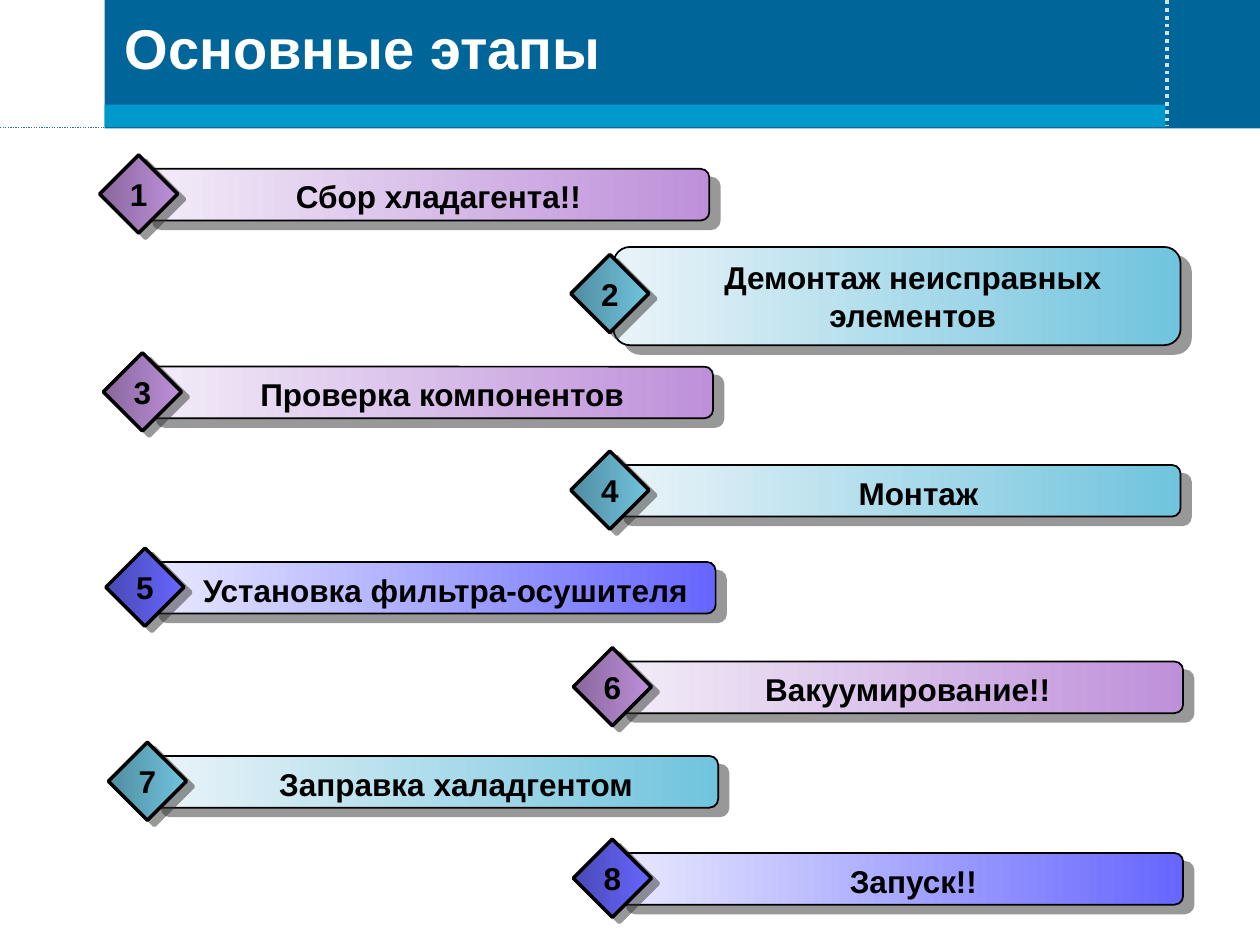
from lxml import etree
from pptx import Presentation
from pptx.dml.color import RGBColor
from pptx.enum import dml, shapes, text
from pptx.oxml import parse_xml
from pptx.oxml.ns import nsdecls, qn
from pptx.util import Inches, Pt


def rgb(code):
    return RGBColor.from_string(code)


def shade(props, color, alpha, dist, angle):
    """Give shape or run properties a hard offset shadow."""
    for old in props.findall(qn("a:effectLst")):
        props.remove(old)
    effect = parse_xml(
        f'<a:effectLst {nsdecls("a")}><a:outerShdw blurRad="0" dist="{Pt(dist)}" '
        f'dir="{angle * 60000}" algn="ctr" rotWithShape="0"><a:srgbClr val="{color}">'
        f'<a:alpha val="{alpha * 1000}"/></a:srgbClr></a:outerShdw></a:effectLst>')
    fill = props.find(qn("a:solidFill"))
    if props.tag == qn("a:rPr") and fill is not None:
        fill.addnext(effect)
    else:
        props.append(effect)


prs = Presentation()
prs.slide_width, prs.slide_height = Inches(10), Inches(7.5)
slide = prs.slides.add_slide(prs.slide_layouts[5])
parts = slide.shapes

# Header: dotted rules and two bands
rules = [(0, 1.01, 10, 1.01, "2F6E9D", 0.75), (9.26, 0, 9.26, 1, "CDE1E7", 2.25)]
bands = [(9.17, 0, 1.02, "006699"), (8.42, 0.83, 0.18, "0099CC")]
lines = []
for x1, y1, x2, y2, color, width in rules:
    rule = parts.add_connector(shapes.MSO_CONNECTOR.STRAIGHT,
                               Inches(x1), Inches(y1), Inches(x2), Inches(y2))
    rule.line.color.rgb = rgb(color)
    rule.line.width = Pt(width)
    rule.line.dash_style = dml.MSO_LINE.ROUND_DOT
    etree.SubElement(rule._element.spPr, qn("a:effectLst"))
    lines.append(rule)
for w, y, h, color in bands:
    band = parts.add_shape(shapes.MSO_SHAPE.RECTANGLE,
                           Inches(0.83), Inches(y), Inches(w), Inches(h))
    band.shadow.inherit = False
    band.fill.solid()
    band.fill.fore_color.rgb = rgb(color)
    band.line.fill.background()
parts._spTree.append(lines[1]._element)  # the upright rule lies over the bands

# Title, brought in front of the bands
title = parts.title
parts._spTree.append(title._element)
title.left, title.top = Inches(0.75), Inches(0.07)
title.width, title.height = Inches(7.88), Inches(0.61)
frame = title.text_frame
frame.margin_left = Inches(0.24)
frame.margin_right = frame.margin_top = frame.margin_bottom = Inches(0.04)
frame.vertical_anchor = text.MSO_ANCHOR.TOP
frame.auto_size = text.MSO_AUTO_SIZE.NONE
para = frame.paragraphs[0]
para.alignment = text.PP_ALIGN.LEFT
run = para.add_run()
run.text = "Основные этапы"
run.font.size, run.font.bold, run.font.name = Pt(32), True, "Arial"
run.font.color.rgb = rgb("FFFFFF")
shade(run._r.get_or_add_rPr(), "000000", 100, 2.8, 45)

# Steps: pale and full tone of the bar, dark tone of the diamond
tones = {
    "plum": ("F3EDF8", "BE90DA", "88679C"),
    "aqua": ("EAF4F8", "70C4DE", "508C9F"),
    "blue": ("E9E9FF", "6666FF", "4949B6"),
}
# tone, bar left, bar top, bar height, label left, label width, label
steps = [
    ("plum", 1.13, 1.34, 0.41, 1.7, 3.56, "Сбор хладагента!!"),
    ("aqua", 4.87, 1.96, 0.78, 5.16, 4.17, "Демонтаж неисправных элементов"),
    ("plum", 1.16, 2.91, 0.41, 1.73, 3.56, "Проверка компонентов"),
    ("aqua", 4.87, 3.69, 0.41, 5.51, 3.56, "Монтаж"),
    ("blue", 1.18, 4.46, 0.41, 1.39, 4.29, "Установка фильтра-осушителя"),
    ("plum", 4.89, 5.25, 0.41, 5.46, 3.56, "Вакуумирование!! "),
    ("aqua", 1.2, 6, 0.41, 1.84, 3.56, "Заправка халадгентом"),
    ("blue", 4.89, 6.77, 0.41, 5.47, 3.56, "Запуск!!"),
]
for num, (tone, x, y, h, left, wide, label) in enumerate(steps, 1):
    pale, full, dark = tones[tone]
    tall = h > 0.5
    top = y + 0.06 if tall else y - 0.11
    for kind, box, start, width, dist, angle in [
        (shapes.MSO_SHAPE.ROUNDED_RECTANGLE, (x, y, 4.5, h), pale, 1, 7.8, 40),
        (shapes.MSO_SHAPE.DIAMOND, (x - 0.34, top, 0.62, 0.62), dark, 2, 5, 37),
    ]:
        shape = parts.add_shape(kind, *map(Inches, box))
        shape.shadow.inherit = False
        shape.fill.gradient()
        shape.fill.gradient_angle = 0
        for stop, color in zip(shape.fill.gradient_stops, (start, full)):
            stop.color.rgb = rgb(color)
        shape.line.color.rgb = rgb("000000")
        shape.line.width = Pt(width)
        shade(shape._element.spPr, "333333", 50, dist, angle)

    label_box = (left, y + 0.04, wide, 0.71) if tall else (left, y + 0.02, wide, 0.4)
    for words, box, wrap in [(label, label_box, True),
                             (str(num), (x - 0.2, top + 0.11, 0.34, 0.4), False)]:
        frame = parts.add_textbox(*map(Inches, box)).text_frame
        frame.word_wrap = wrap
        para = frame.paragraphs[0]
        para.alignment = text.PP_ALIGN.CENTER
        run = para.add_run()
        run.text = words
        run.font.size, run.font.bold, run.font.name = Pt(18), True, "Arial"
        run.font.color.rgb = rgb("000000")

prs.save("out.pptx")
